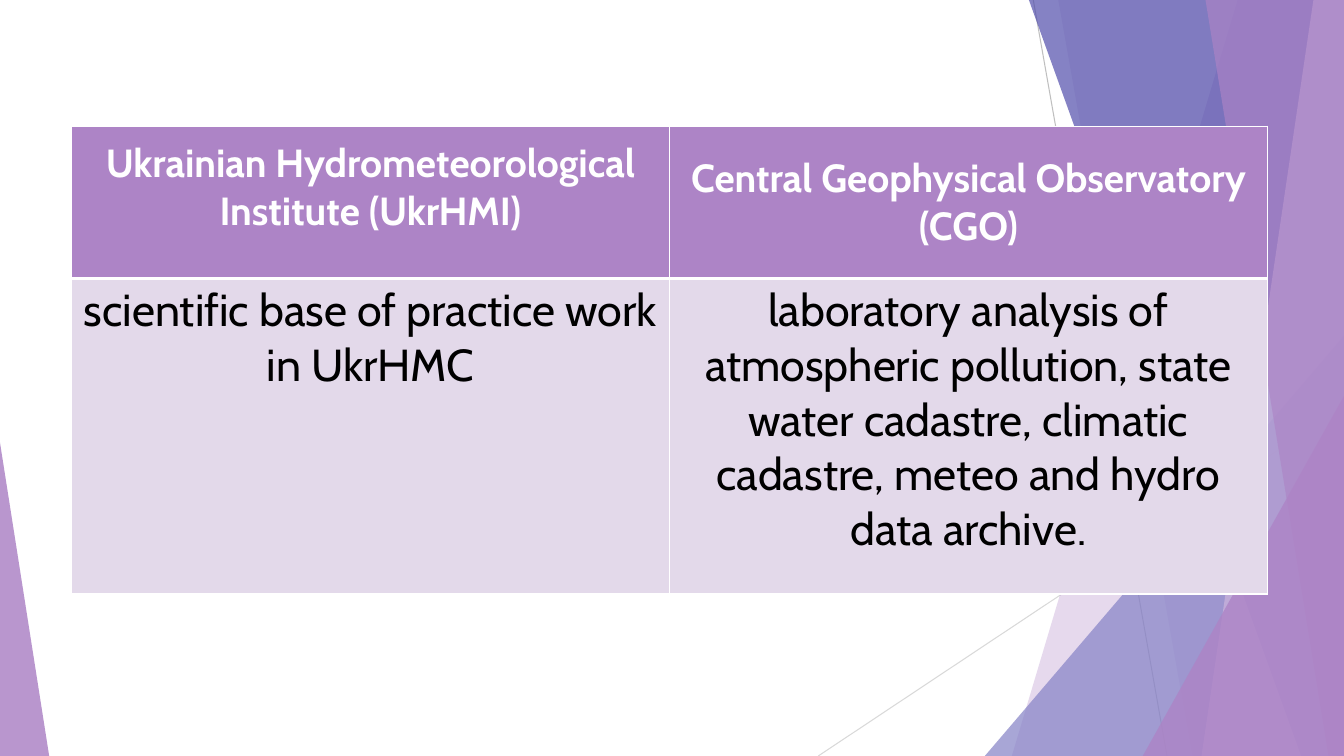
"""Build a slide with a two-column table of institutions over a faceted purple background."""
from dataclasses import dataclass

from lxml import etree
from pptx import Presentation
from pptx import util as u
from pptx.dml import color
from pptx.enum import shapes, text
from pptx.oxml import ns

WIDTH, HEIGHT = 33.87, 19.05
PURPLE, LILAC, WHITE = "AD84C6", "E3D9EA", "FFFFFF"


@dataclass
class Ray:
    start: tuple[float, float]
    end: tuple[float, float]
    colour: str


@dataclass
class Band:
    top_x: float
    bottom_x: float
    colour: str
    opacity: int


@dataclass
class Wedge:
    left: float
    top: float
    width: float
    apex: float
    colour: str
    opacity: int


@dataclass
class Row:
    height: float
    texts: tuple[str, str]
    fill: str
    anchor: text.MSO_ANCHOR
    font: dict
    bottoms: tuple[float, float]
    borders: dict


RAYS = [
    Ray((26.04, 0), (29.41, HEIGHT), "BFBFBF"),
    Ray((WIDTH, 10.24), (20.62, HEIGHT), "D9D9D9"),
]
FACETS = [
    Band(31.19, 25.5, PURPLE, 30),
    Band(26.67, 30.05, PURPLE, 20),
    Wedge(24.82, 8.46, 9.05, 1, "8784C7", 72),
    Band(25.93, 32.79, "524EAB", 70),
    Band(33.1, 30.28, "CEB5DD", 70),
    Band(30.38, 33.48, PURPLE, 65),
    Wedge(28.8, 9.98, 5.07, 1, PURPLE, 80),
    Wedge(0, 11.15, 1.24, 0, PURPLE, 85),
]
ROWS = [
    Row(3.84,
        ("Ukrainian Hydrometeorological Institute (UkrHMI)",
         "Central Geophysical Observatory (CGO)"),
        PURPLE, text.MSO_ANCHOR.MIDDLE,
        {"name": "Cabin", "size": u.Pt(28), "bold": True}, (0.89, 0.13),
        {"lnL": 1, "lnR": 1, "lnT": 1, "lnB": 3}),
    Row(7.95,
        ("scientific base of practice work in UkrHMC",
         "laboratory analysis of atmospheric pollution, state water cadastre, "
         "climatic cadastre, meteo and hydro data archive."),
        LILAC, text.MSO_ANCHOR.TOP,
        {"name": "Cabin", "size": u.Pt(32), "bold": False}, (0.13, 0.13),
        {"lnL": 1, "lnR": 1, "lnT": 3, "lnB": 1}),
]
FONT_COLOURS = (WHITE, "000000")


def rgb(value: str) -> color.RGBColor:
    return color.RGBColor.from_string(value)


def draw_ray(s, ray: Ray) -> None:
    ends = [u.Cm(v) for v in (*ray.start, *ray.end)]
    sp = s.shapes.add_connector(shapes.MSO_CONNECTOR.STRAIGHT, *ends)
    sp.line.color.rgb = rgb(ray.colour)
    sp.line.width = u.Pt(0.75)
    etree.SubElement(sp._element.spPr, ns.qn("a:effectLst"))


def add_band(s, band: Band):
    points = [(band.top_x, 0), (WIDTH, 0), (WIDTH, HEIGHT), (band.bottom_x, HEIGHT)]
    corners = [(u.Cm(x), u.Cm(y)) for x, y in points]
    builder = s.shapes.build_freeform(*corners[0])
    builder.add_line_segments(corners[1:], close=True)
    return builder.convert_to_shape()


def add_wedge(s, wedge: Wedge):
    box = (wedge.left, wedge.top, wedge.width, HEIGHT - wedge.top)
    sp = s.shapes.add_shape(shapes.MSO_SHAPE.ISOSCELES_TRIANGLE, *map(u.Cm, box))
    sp.adjustments[0] = wedge.apex
    return sp


def draw_facet(s, facet: Band | Wedge) -> None:
    sp = add_band(s, facet) if isinstance(facet, Band) else add_wedge(s, facet)
    sp.shadow.inherit = False
    sp.line.fill.background()
    sp.fill.solid()
    sp.fill.fore_color.rgb = rgb(facet.colour)
    clr = next(sp._element.spPr.iter(ns.qn("a:srgbClr")))
    etree.SubElement(clr, ns.qn("a:alpha"), val=str(facet.opacity * 1000))


def set_borders(cell, borders: dict) -> None:
    props = cell._tc.get_or_add_tcPr()
    for i, (side, points) in enumerate(borders.items()):
        ln = etree.Element(ns.qn(f"a:{side}"), w=str(u.Pt(points)))
        fill = etree.SubElement(ln, ns.qn("a:solidFill"))
        etree.SubElement(fill, ns.qn("a:srgbClr"), val=WHITE)
        props.insert(i, ln)


def fill_cell(cell, row: Row, column: int, font_colour: str) -> None:
    cell.fill.solid()
    cell.fill.fore_color.rgb = rgb(row.fill)
    cell.vertical_anchor = row.anchor
    cell.margin_bottom = u.Cm(row.bottoms[column])
    p = cell.text_frame.paragraphs[0]
    p.alignment = text.PP_ALIGN.CENTER
    r = p.add_run()
    r.text = row.texts[column]
    for name, value in row.font.items():
        setattr(r.font, name, value)
    r.font.color.rgb = rgb(font_colour)
    set_borders(cell, row.borders)


def draw_table(s, rows: list[Row]) -> None:
    box = (1.8, 3.18, 30.14, sum(row.height for row in rows))
    table = s.shapes.add_table(len(rows), 2, *map(u.Cm, box)).table
    for i, (row, font_colour) in enumerate(zip(rows, FONT_COLOURS)):
        table.rows[i].height = u.Cm(row.height)
        for column in range(2):
            fill_cell(table.cell(i, column), row, column, font_colour)


def main() -> None:
    prs = Presentation()
    prs.slide_width, prs.slide_height = u.Cm(WIDTH), u.Cm(HEIGHT)
    s = prs.slides.add_slide(prs.slide_layouts[6])
    for ray in RAYS:
        draw_ray(s, ray)
    for facet in FACETS:
        draw_facet(s, facet)
    draw_table(s, ROWS)
    prs.save("out.pptx")


if __name__ == "__main__":
    main()
